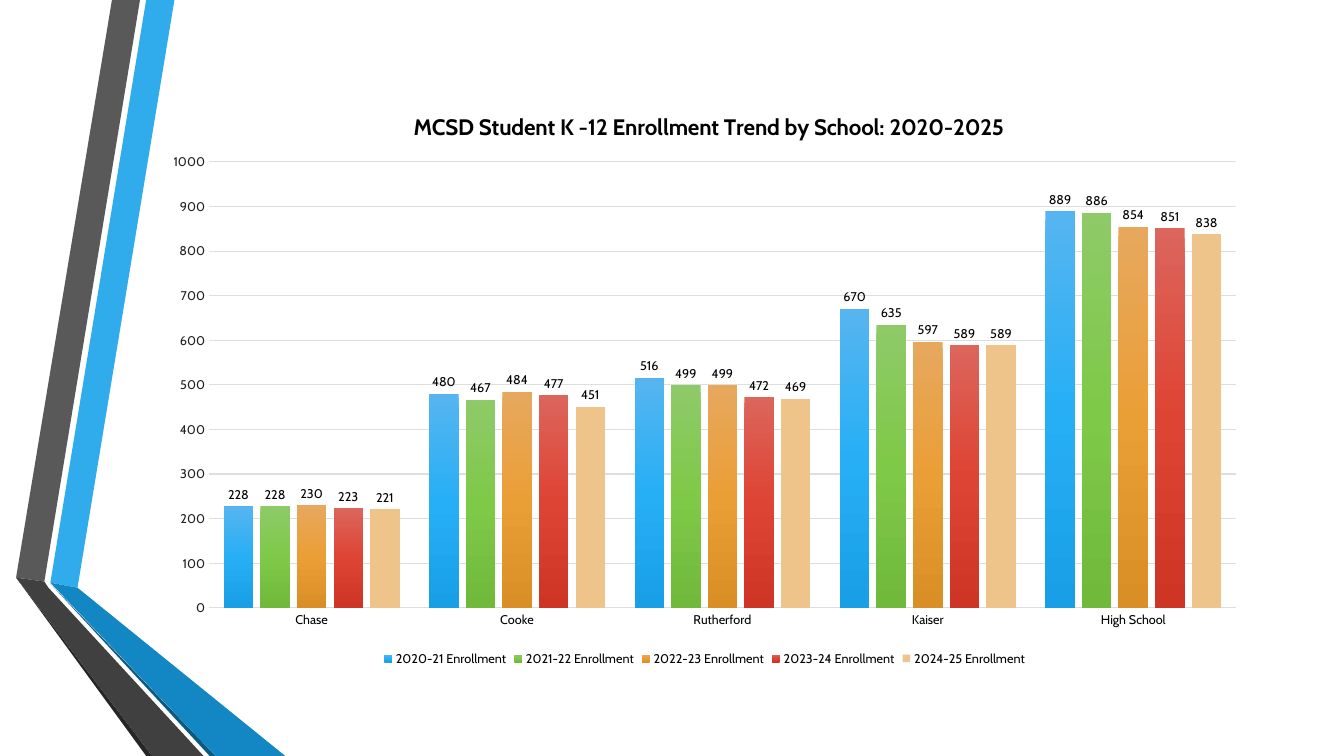
from copy import deepcopy
from lxml import etree
from pptx import Presentation
from pptx.chart.data import CategoryChartData
from pptx.dml.color import RGBColor
from pptx.enum.chart import XL_CHART_TYPE as Chart, XL_LABEL_POSITION as LabelPos
from pptx.enum.chart import XL_LEGEND_POSITION as LegendPos, XL_TICK_MARK as Tick
from pptx.oxml.ns import qn
from pptx.util import Pt

# Content
TITLE = "MCSD Student K -12 Enrollment Trend by School: 2020-2025"
SCHOOLS = ["Chase", "Cooke", "Rutherford", "Kaiser", "High School"]
ENROLLMENT = {
    "2020-21": [228, 480, 516, 670, 889],
    "2021-22": [228, 467, 499, 635, 886],
    "2022-23": [230, 484, 499, 597, 854],
    "2023-24": [223, 477, 472, 589, 851],
    "2024-25": [221, 451, 469, 589, 838],
}

# Look
FONT = "Cabin"
COLORS = {
    "text": "000000", "axis": "212121", "grid": "DEDEDE",
    "blue": "30ACEC", "blue_low": "1287C3", "blue_edge": "0C5A82",
    "gray": "595959", "gray_low": "404040", "gray_edge": "262626",
}
BAR_COLORS = [
    ["56B5F0", "27AFF5", "189FE5"],
    ["8ECA68", "7FC949", "70B93B"],
    ["E7A85E", "EA9E36", "D98E26"],
    ["DC655C", "DE4433", "CE3525"],
    ["EEC48B"],
]
RIBBONS = [
    ("blue", [(36, 416.2), (55.4, 419.8), (124.6, 0), (104.4, 0)]),
    ("gray", [(100, 0), (80, 0), (11.5, 412.6), (31.7, 415.4)]),
    ("gray_edge", [(11.5, 412.6), (104.4, 540), (108.7, 540)]),
    ("blue_edge", [(36, 416.9), (149.8, 540), (154.1, 540)]),
    ("blue_low", [(36, 416.2), (154.1, 540), (203.8, 540), (55.4, 419.8)]),
    ("gray_low", [(145.4, 540), (34.6, 419.8), (31.7, 415.4), (11.5, 412.6),
                  (108.7, 540)]),
]
# Chart frame, plot area and title corner in points on the slide
FRAME = (108, 61.2, 790.6, 417.6)
PLOT = (149.3, 115.7, 733.6, 318.6)
TITLE_AT = (292.5, 77)


def rgb(value):
    return RGBColor.from_string(value)


def set_font(font, size=9, color="text", bold=False):
    font.name, font.size, font.bold = FONT, Pt(size), bold
    font.color.rgb = rgb(COLORS[color])


def add_text(tf, text, **style):
    r = tf.paragraphs[0].add_run()
    r.text = text
    set_font(r.font, **style)


def set_line(line):
    line.color.rgb = rgb(COLORS["grid"])
    line.width = Pt(0.75)


def add_ribbon(shapes, color, points):
    corners = [(Pt(x), Pt(y)) for x, y in points]
    builder = shapes.build_freeform(*corners[0], scale=1.0)
    builder.add_line_segments(corners[1:], close=True)
    s = builder.convert_to_shape()
    s.shadow.inherit = False
    s.fill.solid()
    s.fill.fore_color.rgb = rgb(COLORS[color])
    s.line.fill.background()


def fill_bars(series, colors):
    fill = series.format.fill
    if len(colors) == 1:
        fill.solid()
        fill.fore_color.rgb = rgb(colors[0])
        return
    fill.gradient()
    fill.gradient_angle = 270
    stop_list = next(series.format._element.iter(qn("a:gsLst")))
    stop_list.append(deepcopy(stop_list[0]))
    for i, (stop, color) in enumerate(zip(fill.gradient_stops, colors)):
        stop.position = i / 2
        stop.color.rgb = rgb(color)


def set_layout(parent, before, box, inner=False):
    """Place a chart part; box is in points on the slide."""
    old = parent.find(qn("c:layout"))
    if old is not None:
        parent.remove(old)
    layout = etree.Element(qn("c:layout"))
    manual = etree.SubElement(layout, qn("c:manualLayout"))
    left, top, width, height = FRAME
    shares = [(box[0] - left) / width, (box[1] - top) / height]
    shares += [size / whole for size, whole in zip(box[2:], (width, height))]
    values = [("layoutTarget", "inner")] if inner else []
    values += [("xMode", "edge"), ("yMode", "edge")]
    values += [(tag, f"{share:.4f}") for tag, share in zip("xywh", shares)]
    for tag, value in values:
        etree.SubElement(manual, qn("c:" + tag)).set("val", value)
    before.addprevious(layout)


prs = Presentation()
prs.slide_width, prs.slide_height = Pt(960), Pt(540)
slide = prs.slides.add_slide(prs.slide_layouts[6])

# Ribbons on the left
for color, points in RIBBONS:
    add_ribbon(slide.shapes, color, points)

# Chart
data = CategoryChartData()
data.categories = SCHOOLS
for year, counts in ENROLLMENT.items():
    data.add_series(f"{year} Enrollment", counts)
chart = slide.shapes.add_chart(
    Chart.COLUMN_CLUSTERED, *[Pt(v) for v in FRAME], data).chart
set_font(chart.font, size=10)

# Chart title and legend
chart.has_title = True
add_text(chart.chart_title.text_frame, TITLE, size=16, bold=True)
title = chart.chart_title._element
set_layout(title, title.find(qn("c:overlay")), TITLE_AT)
chart.has_legend = True
chart.legend.position = LegendPos.BOTTOM
chart.legend.include_in_layout = False
set_font(chart.legend.font)

# Axes
cat_axis, val_axis = chart.category_axis, chart.value_axis
for axis, color in ((cat_axis, "text"), (val_axis, "axis")):
    axis.major_tick_mark = axis.minor_tick_mark = Tick.NONE
    set_font(axis.tick_labels.font, color=color)
set_line(cat_axis.format.line)
val_axis.format.line.fill.background()
set_line(val_axis.major_gridlines.format.line)
val_axis.minimum_scale, val_axis.maximum_scale = 0, 1000
val_axis.major_unit = 100

# Bars and value labels
plot = chart.plots[0]
plot.gap_width, plot.overlap, plot.vary_by_categories = 100, -24, False
for series, colors in zip(plot.series, BAR_COLORS):
    fill_bars(series, colors)
    labels = series.data_labels
    labels.show_value = True
    labels.position = LabelPos.OUTSIDE_END
    set_font(labels.font)
bars = plot._element
set_layout(bars.getparent(), bars, PLOT, inner=True)

prs.save("out.pptx")
